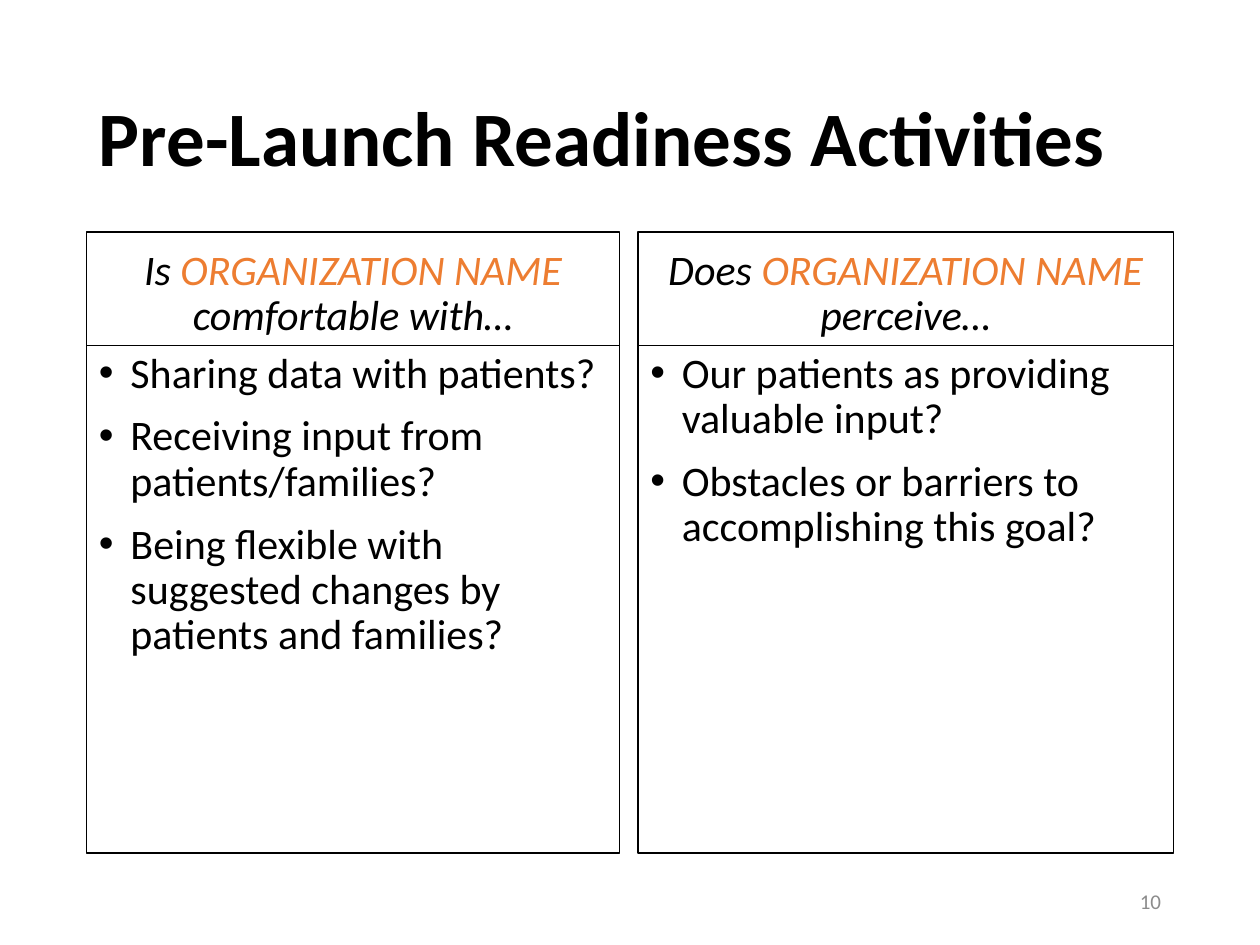
from dataclasses import dataclass

from lxml.etree import SubElement
from pptx import Presentation
from pptx.dml.color import RGBColor
from pptx.enum.shapes import MSO_SHAPE
from pptx.enum.text import MSO_ANCHOR, PP_ALIGN
from pptx.oxml.ns import qn
from pptx.util import Pt

COLORS = {"text": "000000", "accent": "ED7D31", "number": "8C8C8C"}
FONT = "Calibri"
HEADING_TOP, HEADING_HEIGHT = 132.5, 65
BODY_TOP, BODY_HEIGHT = HEADING_TOP + HEADING_HEIGHT, 290
MARGIN, CONTENT_WIDTH = 49.5, 621
BULLET_INDENT = 18


@dataclass(frozen=True)
class Column:
    left: float
    width: float
    opening: str
    ending: str
    questions: tuple[str, ...]


COLUMNS = (
    Column(MARGIN, 304.5, "Is ", "comfortable with…", (
        "Sharing data with patients?",
        "Receiving input from patients/families?",
        "Being flexible with suggested changes by patients and families?",
    )),
    Column(364.5, 306, "Does ", "perceive…", (
        "Our patients as providing valuable input?",
        "Obstacles or barriers to accomplishing this goal?",
    )),
)


def add_bullet(paragraph) -> None:
    properties = paragraph._p.get_or_add_pPr()
    properties.set("marL", str(Pt(BULLET_INDENT)))
    properties.set("indent", str(-Pt(BULLET_INDENT)))
    SubElement(properties, qn("a:buFont"), typeface="Arial")
    SubElement(properties, qn("a:buChar"), char="•")


def write_text(shape, paragraphs, *, size=24, bold=False, italic=False,
               align=PP_ALIGN.LEFT, anchor=MSO_ANCHOR.TOP,
               line_spacing=0.9, space_before=0, bullet=False) -> None:
    frame = shape.text_frame
    frame.word_wrap = True
    frame.vertical_anchor = anchor
    for index, runs in enumerate(paragraphs):
        paragraph = frame.add_paragraph() if index else frame.paragraphs[0]
        paragraph.alignment = align
        paragraph.line_spacing = line_spacing
        paragraph.space_before = Pt(space_before)
        if bullet:
            add_bullet(paragraph)
        for text, color in runs:
            run = paragraph.add_run()
            run.text = text
            run.font.name = FONT
            run.font.size = Pt(size)
            run.font.bold = bold
            run.font.italic = italic
            run.font.color.rgb = RGBColor.from_string(COLORS[color])


def add_text_box(slide, left: float, top: float, width: float, height: float):
    return slide.shapes.add_textbox(Pt(left), Pt(top), Pt(width), Pt(height))


def add_panel(slide, left: float, top: float, width: float, height: float):
    shape = slide.shapes.add_shape(
        MSO_SHAPE.RECTANGLE, Pt(left), Pt(top), Pt(width), Pt(height))
    shape.shadow.inherit = False
    shape.fill.background()
    shape.line.color.rgb = RGBColor.from_string(COLORS["text"])
    shape.line.width = Pt(0.75)
    return shape


def add_column(slide, column: Column) -> None:
    heading = add_panel(slide, column.left, HEADING_TOP, column.width, HEADING_HEIGHT)
    heading_runs = [(column.opening, "text"), ("ORGANIZATION NAME ", "accent"),
                    (column.ending, "text")]
    write_text(heading, [heading_runs], italic=True, align=PP_ALIGN.CENTER,
               anchor=MSO_ANCHOR.BOTTOM, space_before=10)
    body = add_panel(slide, column.left, BODY_TOP, column.width, BODY_HEIGHT)
    write_text(body, [[(question, "text")] for question in column.questions],
               space_before=10, bullet=True)


def main() -> None:
    presentation = Presentation()
    presentation.slide_width = Pt(720)
    presentation.slide_height = Pt(540)
    slide = presentation.slides.add_slide(presentation.slide_layouts[6])

    title = add_text_box(slide, MARGIN, 28.75, CONTENT_WIDTH, 104.5)
    write_text(title, [[("Pre-Launch Readiness Activities", "text")]],
               size=44, bold=True, anchor=MSO_ANCHOR.MIDDLE)
    for column in COLUMNS:
        add_column(slide, column)
    number = add_text_box(slide, 508.5, 500.5, 162, 28.75)
    write_text(number, [[("10", "number")]], size=12, align=PP_ALIGN.RIGHT,
               anchor=MSO_ANCHOR.MIDDLE, line_spacing=1.0)

    presentation.save("out.pptx")


if __name__ == "__main__":
    main()
